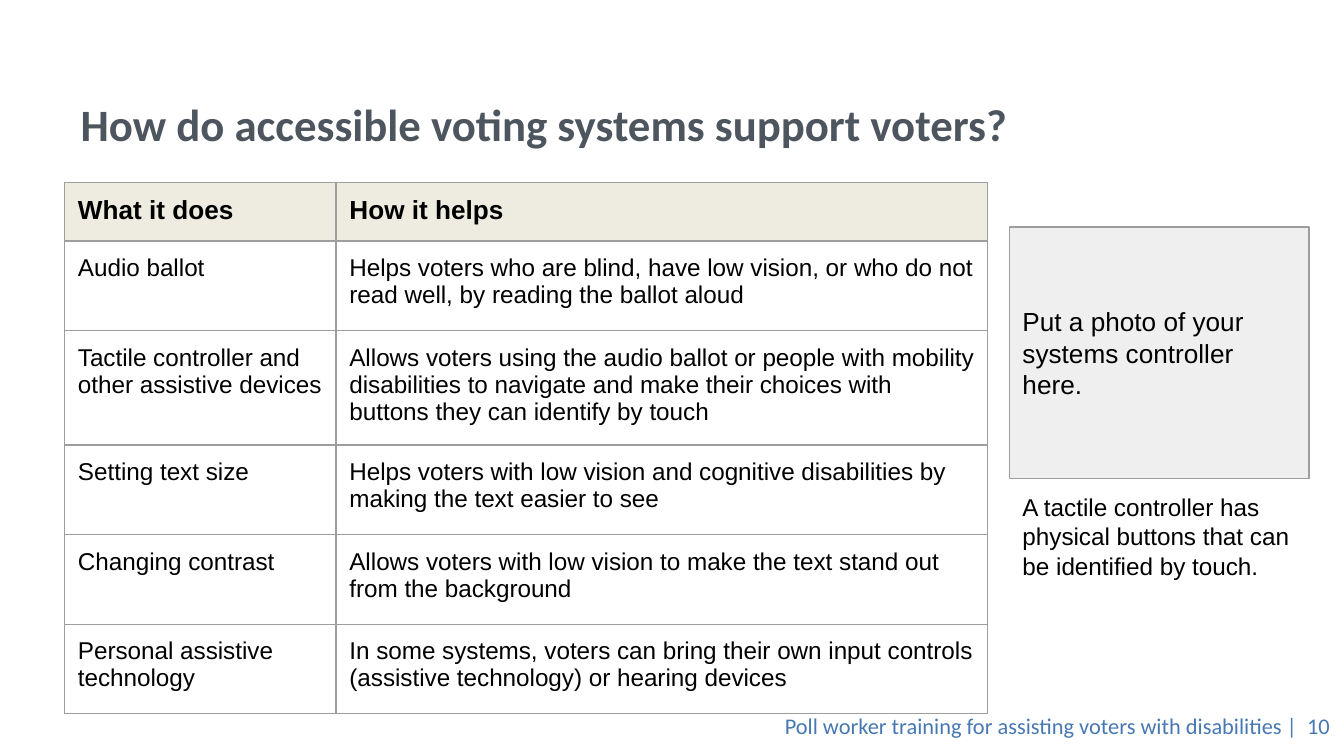
"""Build the slide on how accessible voting systems support voters."""
from dataclasses import dataclass

from lxml import etree
from pptx import Presentation
from pptx.dml.color import RGBColor
from pptx.enum.shapes import MSO_SHAPE
from pptx.enum.text import MSO_ANCHOR, PP_ALIGN
from pptx.oxml.ns import qn
from pptx.util import Inches, Pt

RECT = MSO_SHAPE.RECTANGLE
TOP, MIDDLE, BOTTOM = MSO_ANCHOR.TOP, MSO_ANCHOR.MIDDLE, MSO_ANCHOR.BOTTOM
LEFT, RIGHT = PP_ALIGN.LEFT, PP_ALIGN.RIGHT


@dataclass(frozen=True)
class Theme:
    heading_font: str = "Calibri"
    body_font: str = "Arial"
    title: str = "4D565E"
    footer: str = "4778B2"
    ink: str = "000000"
    header_fill: str = "EEEBE0"
    photo_fill: str = "EFEFEF"
    rule: str = "9E9E9E"
    rule_width: float = 0.75
    title_size: int = 24
    label_size: int = 14
    body_size: int = 13
    footer_size: int = 12


T = Theme()
TITLE = "How do accessible voting systems support voters?"
FOOTER = "Poll worker training for assisting voters with disabilities |  10"
PHOTO_NOTE = "Put a photo of your systems controller here."
CAPTION = "A tactile controller has physical buttons that can be identified by touch."
ROWS = [
    ("What it does", "How it helps"),
    ("Audio ballot",
     "Helps voters who are blind, have low vision, or who do not read well, "
     "by reading the ballot aloud"),
    ("Tactile controller and other assistive devices",
     "Allows voters using the audio ballot or people with mobility disabilities "
     "to navigate and make their choices with buttons they can identify by touch"),
    ("Setting text size",
     "Helps voters with low vision and cognitive disabilities by making the text "
     "easier to see"),
    ("Changing contrast",
     "Allows voters with low vision to make the text stand out from the background"),
    ("Personal assistive technology",
     "In some systems, voters can bring their own input controls "
     "(assistive technology) or hearing devices"),
]

SLIDE_W = 10
SLIDE_H = SLIDE_W * 9 / 16
TABLE_LEFT, TABLE_TOP = 0.48, 1.36
COL_WIDTHS = [2.02, 4.85]
HEADER_H, TWO_LINES, THREE_LINES = 0.43, 2 / 3, 0.85
ROW_HEIGHTS = [HEADER_H, TWO_LINES, THREE_LINES] + [TWO_LINES] * 3
SIDE_LEFT, SIDE_W = 7.51, 2.23
PHOTO_TOP, PHOTO_H, CAPTION_H = 1.69, 1.87, 0.86
FOOTER_W, FOOTER_TOP, FOOTER_H = 5.12, 5.25, 0.3
PAD, THIN_PAD = 0.1, 0.05


def box(left, top, width, height):
    return [Inches(v) for v in (left, top, width, height)]


def set_margins(target, vertical):
    target.margin_left = target.margin_right = Inches(PAD)
    target.margin_top = target.margin_bottom = Inches(vertical)


def style(p, size, color=T.ink, font=T.body_font, bold=False, align=LEFT):
    p.alignment = align
    p.font.name, p.font.size, p.font.bold = font, Pt(size), bold
    p.font.color.rgb = RGBColor.from_string(color)


def write(shape, text, size, anchor=MIDDLE, vertical=PAD, **look):
    tf = shape.text_frame
    tf.word_wrap = True
    tf.vertical_anchor = anchor
    set_margins(tf, vertical)
    tf.text = text
    style(tf.paragraphs[0], size, **look)


def add_borders(cell):
    tc_pr = cell._tc.get_or_add_tcPr()
    for i, side in enumerate(("lnL", "lnR", "lnT", "lnB")):
        ln = etree.Element(qn(f"a:{side}"), w=str(Pt(T.rule_width)))
        fill = etree.SubElement(ln, qn("a:solidFill"))
        etree.SubElement(fill, qn("a:srgbClr"), val=T.rule)
        tc_pr.insert(i, ln)


def add_benefits(s):
    area = box(TABLE_LEFT, TABLE_TOP, sum(COL_WIDTHS), sum(ROW_HEIGHTS))
    table = s.shapes.add_table(len(ROWS), len(COL_WIDTHS), *area).table
    table.first_row = table.horz_banding = False
    for col, width in zip(table.columns, COL_WIDTHS):
        col.width = Inches(width)
    for r, (row, height) in enumerate(zip(ROWS, ROW_HEIGHTS)):
        table.rows[r].height = Inches(height)
        header = r == 0
        for c, text in enumerate(row):
            cell = table.cell(r, c)
            cell.text = text
            cell.vertical_anchor = TOP
            set_margins(cell, PAD)
            style(cell.text_frame.paragraphs[0],
                  T.label_size if header else T.body_size, bold=header)
            if header:
                cell.fill.solid()
                cell.fill.fore_color.rgb = RGBColor.from_string(T.header_fill)
            else:
                cell.fill.background()
            add_borders(cell)


def add_photo_panel(s):
    panel = s.shapes.add_shape(RECT, *box(SIDE_LEFT, PHOTO_TOP, SIDE_W, PHOTO_H))
    panel.shadow.inherit = False
    panel.fill.solid()
    panel.fill.fore_color.rgb = RGBColor.from_string(T.photo_fill)
    panel.line.color.rgb = RGBColor.from_string(T.rule)
    panel.line.width = Pt(T.rule_width)
    write(panel, PHOTO_NOTE, T.label_size)
    caption = s.shapes.add_textbox(
        *box(SIDE_LEFT, PHOTO_TOP + PHOTO_H, SIDE_W, CAPTION_H))
    write(caption, CAPTION, T.body_size)


def main():
    prs = Presentation()
    prs.slide_width, prs.slide_height = Inches(SLIDE_W), Inches(SLIDE_H)
    s = prs.slides.add_slide(prs.slide_layouts[5])
    title = s.shapes.title
    title.left, title.top, title.width, title.height = box(0.5, 0.23, 9, 0.94)
    write(title, TITLE, T.title_size, BOTTOM, THIN_PAD,
          color=T.title, font=T.heading_font, bold=True)
    footer = s.shapes.add_textbox(
        *box(SLIDE_W - FOOTER_W, FOOTER_TOP, FOOTER_W, FOOTER_H))
    write(footer, FOOTER, T.footer_size, TOP, THIN_PAD,
          color=T.footer, font=T.heading_font, align=RIGHT)
    add_benefits(s)
    add_photo_panel(s)
    prs.save("out.pptx")


if __name__ == "__main__":
    main()
